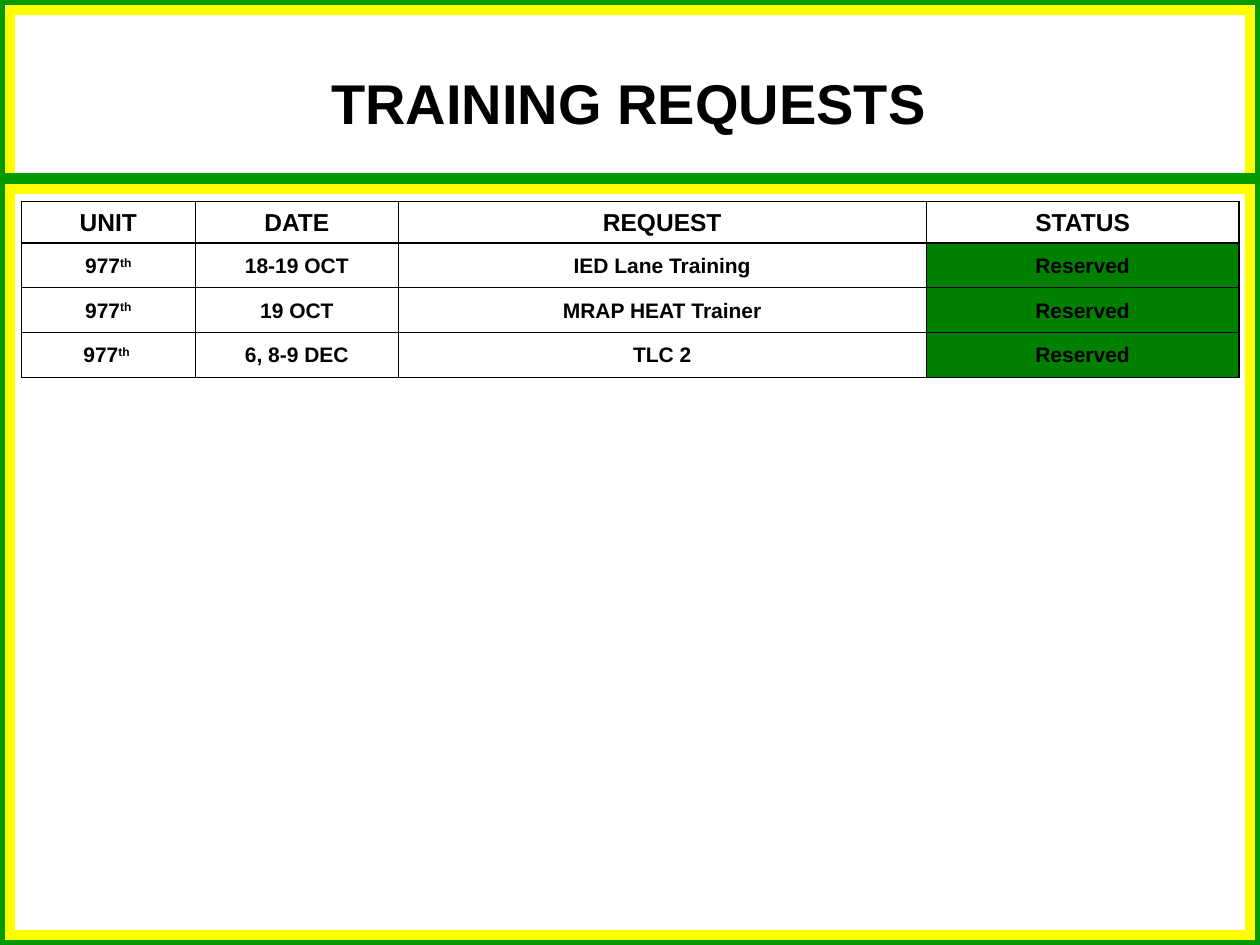
from lxml import etree
from pptx import Presentation
from pptx.dml.color import RGBColor
from pptx.enum import shapes, text
from pptx.oxml import ns
from pptx.util import Cm, Pt

GREEN, YELLOW, BLACK, STATUS_GREEN = "009900", "FFFF00", "000000", "008000"
SLIDE_W, SLIDE_H = 25.4, 19.05
HEADINGS = ["UNIT", "DATE", "REQUEST", "STATUS"]
REQUESTS = [
    ("977", "th", "18-19 OCT", "IED Lane Training", "Reserved"),
    ("977", "th", "19 OCT", "MRAP HEAT Trainer", "Reserved"),
    ("977", "th ", "6, 8-9 DEC", "TLC 2", "Reserved"),
]
COLUMN_WIDTHS = [3.51, 4.09, 10.64, 6.31]
HEADING_HEIGHT, ROW_HEIGHT = 0.84, 0.9


def color(hex_code):
    return RGBColor.from_string(hex_code)


def set_font(para, size):
    para.alignment = text.PP_ALIGN.CENTER
    para.font.name = "Arial"
    para.font.size = Pt(size)
    para.font.bold = True
    para.font.color.rgb = color(BLACK)


def add_outline(page, left, top, width, height, line_color):
    frame = page.shapes.add_shape(
        shapes.MSO_SHAPE.RECTANGLE, Cm(left), Cm(top), Cm(width), Cm(height))
    frame.shadow.inherit = False
    frame.fill.background()
    frame.line.color.rgb = color(line_color)
    frame.line.width = Pt(6)


def add_rule(page, left, right, y, line_color):
    rule = page.shapes.add_connector(
        shapes.MSO_CONNECTOR.STRAIGHT, Cm(left), Cm(y), Cm(right), Cm(y))
    rule.line.color.rgb = color(line_color)
    rule.line.width = Pt(6)
    etree.SubElement(rule._element.spPr, ns.qn("a:effectLst"))


def add_border(page, left, top, width, height):
    """Green outer frame with a yellow inner one, and a double rule under the title."""
    inset = 0.2
    right, bottom = left + width, top + height
    add_outline(page, left + inset, top + inset,
                width - 2 * inset, height - inset, YELLOW)
    add_outline(page, left, top, width, height, GREEN)
    for y in (bottom - inset, top + 3.81):
        add_rule(page, left + inset, right - inset, y, YELLOW)
    add_rule(page, left, right, top + 3.6, GREEN)


def add_title(page, left, top, width, height, title):
    box = page.shapes.add_textbox(Cm(left), Cm(top), Cm(width), Cm(height))
    frame = box.text_frame
    frame.word_wrap = True
    frame.vertical_anchor = text.MSO_ANCHOR.MIDDLE
    para = frame.paragraphs[0]
    para.text = title
    para.line_spacing = 0.8
    set_font(para, 32)


def set_borders(cell, widths):
    """Draw black sides; widths are points for left, right, top and bottom."""
    properties = cell._tc.get_or_add_tcPr()
    for side, width in zip("LRTB", widths):
        line = etree.SubElement(properties, ns.qn(f"a:ln{side}"), w=str(Pt(width)))
        fill = etree.SubElement(line, ns.qn("a:solidFill"))
        etree.SubElement(fill, ns.qn("a:srgbClr"), val=BLACK)


def fill_cell(cell, words, size, superscript=""):
    cell.vertical_anchor = text.MSO_ANCHOR.MIDDLE
    cell.margin_left = cell.margin_right = cell.margin_top = Cm(0.03)
    cell.margin_bottom = 0
    para = cell.text_frame.paragraphs[0]
    para.add_run().text = words
    if superscript:
        span = para.add_run()
        span.text = superscript
        span.font._element.set("baseline", "30000")
    set_font(para, size)


def add_request_table(page, left, top, width):
    row_count, column_count = len(REQUESTS) + 1, len(HEADINGS)
    height = HEADING_HEIGHT + ROW_HEIGHT * len(REQUESTS)
    table = page.shapes.add_table(
        row_count, column_count, Cm(left), Cm(top), Cm(width), Cm(height)).table
    table.first_row = table.horz_banding = False
    for column, column_width in zip(table.columns, COLUMN_WIDTHS):
        column.width = Cm(column_width)
    for r, row in enumerate(table.rows):
        row.height = Cm(ROW_HEIGHT if r else HEADING_HEIGHT)
        if r:
            unit, suffix, *rest = REQUESTS[r - 1]
            words, size = [unit, *rest], 12
        else:
            words, suffix, size = HEADINGS, "", 14
        for c, cell in enumerate(row.cells):
            first, last = c == 0, c == column_count - 1
            fill_cell(cell, words[c], size, suffix if first else "")
            set_borders(cell, (1 if first else 0.5, 1 if last else 0.5,
                               1, 0.5 if r == row_count - 1 else 1))
            if r and last:
                cell.fill.solid()
                cell.fill.fore_color.rgb = color(STATUS_GREEN)
            else:
                cell.fill.background()


def main():
    deck = Presentation()
    deck.slide_width, deck.slide_height = Cm(SLIDE_W), Cm(SLIDE_H)
    page = deck.slides.add_slide(deck.slide_layouts[6])
    add_border(page, 0, 0, SLIDE_W, SLIDE_H)
    add_title(page, 4.52, 1.52, 16.31, 1.35, "TRAINING REQUESTS")
    add_request_table(page, 0.43, 4.06, sum(COLUMN_WIDTHS))
    deck.save("out.pptx")


if __name__ == "__main__":
    main()
